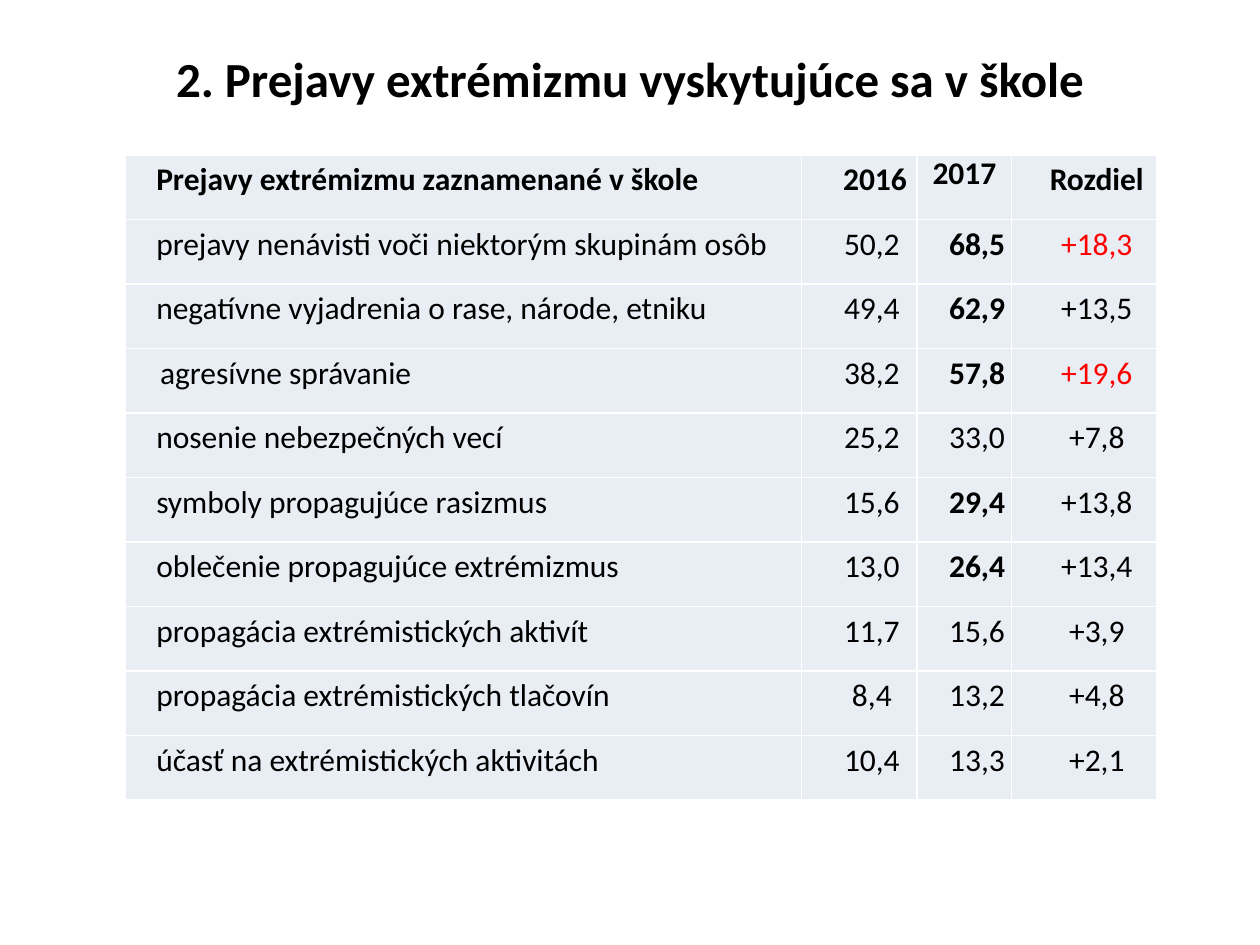
import pptx
import pptx.dml.color
import pptx.enum.text
import pptx.oxml
import pptx.oxml.ns
import pptx.util

Inches = pptx.util.Inches
Align = pptx.enum.text.PP_ALIGN

# Content
TITLE = "2. Prejavy extrémizmu vyskytujúce sa v škole"
HEADER = ("Prejavy extrémizmu zaznamenané v škole", "2016", "2017", "Rozdiel")
FINDINGS = [
    ("prejavy nenávisti voči niektorým skupinám osôb", "50,2", "68,5", "+18,3"),
    ("negatívne vyjadrenia o rase, národe, etniku", "49,4", "62,9", "+13,5"),
    ("agresívne správanie", "38,2", "57,8", "+19,6"),
    ("nosenie nebezpečných vecí", "25,2", "33,0", "+7,8"),
    ("symboly propagujúce rasizmus", "15,6", "29,4", "+13,8"),
    ("oblečenie propagujúce extrémizmus", "13,0", "26,4", "+13,4"),
    ("propagácia extrémistických aktivít", "11,7", "15,6", "+3,9"),
    ("propagácia extrémistických tlačovín", "8,4", "13,2", "+4,8"),
    ("účasť na extrémistických aktivitách", "10,4", "13,3", "+2,1"),
]
BOLD_VALUES = {"68,5", "62,9", "57,8", "29,4", "26,4"}
RED_VALUES = {"+18,3", "+19,6"}

# Left indents in inches; a few cells differ from the rest
INDENT = 0.2
SPECIAL_INDENTS = {"2016": 0.25, "2017": 0, "agresívne správanie": 0.23}

THEME = {
    "font": "Calibri", "title_size": 28, "table_size": 18,
    "text": "000000", "accent": "FF0000", "cell": "E9EDF4", "border": "FFFFFF",
}

# Grid, in inches
SLIDE_W, SLIDE_H = 10, 7.5
TITLE_BOX = (0.5, 0.31, 9, 0.61)
TABLE_LEFT, TABLE_TOP, TABLE_H = 0.99, 1.23, 5.12
COLUMNS = (5.37, 0.92, 0.75, 1.15)
CELL_PAD = 0.05


def color(name):
    return pptx.dml.color.RGBColor.from_string(THEME[name])


def style(paragraph, size, bold, tint="text"):
    font = paragraph.font
    font.name = THEME["font"]
    font.size = pptx.util.Pt(THEME[size])
    font.bold = bold
    font.color.rgb = color(tint)


def add_borders(cell):
    properties = cell._tc.get_or_add_tcPr()
    for side in ("lnL", "lnR", "lnT", "lnB"):
        properties.append(pptx.oxml.parse_xml(
            f'<a:{side} {pptx.oxml.ns.nsdecls("a")} w="12700"><a:solidFill>'
            f'<a:srgbClr val="{THEME["border"]}"/></a:solidFill></a:{side}>'))


def fill_cell(cell, text, is_header, is_label):
    add_borders(cell)
    cell.fill.solid()
    cell.fill.fore_color.rgb = color("cell")
    cell.margin_left = cell.margin_right = Inches(CELL_PAD)
    cell.margin_top = cell.margin_bottom = 0
    cell.text = text
    paragraph = cell.text_frame.paragraphs[0]
    paragraph.alignment = Align.JUSTIFY if is_label else Align.CENTER
    indent = SPECIAL_INDENTS.get(text, INDENT)
    paragraph._p.get_or_add_pPr().set("marL", str(Inches(indent)))
    paragraph.line_spacing = 1.15 if indent else 1.0
    style(paragraph, "table_size", is_header or text in BOLD_VALUES,
          "accent" if text in RED_VALUES else "text")


def main():
    deck = pptx.Presentation()
    deck.slide_width, deck.slide_height = Inches(SLIDE_W), Inches(SLIDE_H)
    slide = deck.slides.add_slide(deck.slide_layouts[6])

    # Title
    heading = slide.shapes.add_textbox(*map(Inches, TITLE_BOX)).text_frame
    heading.word_wrap = True
    heading.vertical_anchor = pptx.enum.text.MSO_ANCHOR.MIDDLE
    heading.text = TITLE
    heading.paragraphs[0].alignment = Align.CENTER
    style(heading.paragraphs[0], "title_size", True)

    # Table of findings
    rows = [HEADER] + FINDINGS
    table = slide.shapes.add_table(
        len(rows), len(COLUMNS), Inches(TABLE_LEFT), Inches(TABLE_TOP),
        Inches(sum(COLUMNS)), Inches(TABLE_H)).table
    for column, width in zip(table.columns, COLUMNS):
        column.width = Inches(width)
    for r, row in enumerate(rows):
        for c, text in enumerate(row):
            fill_cell(table.cell(r, c), text, r == 0, c == 0)

    deck.save("out.pptx")


if __name__ == "__main__":
    main()
